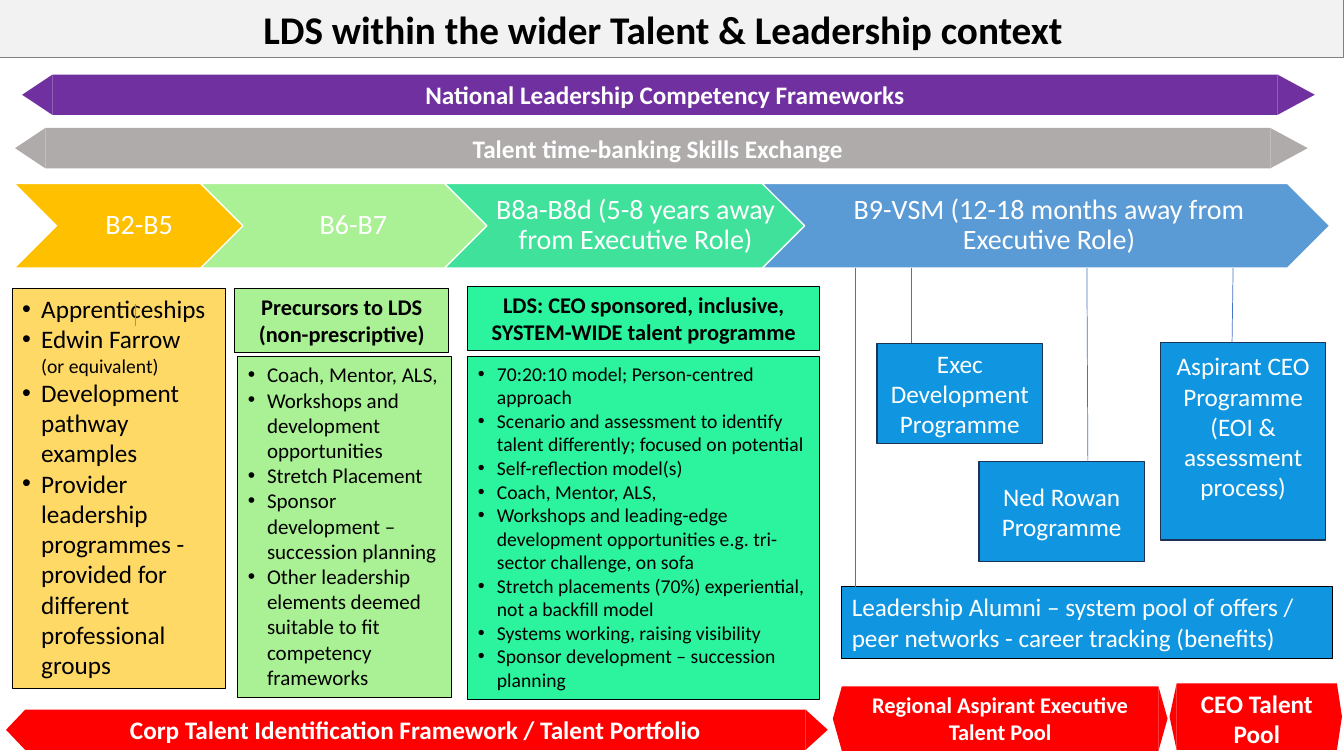
from dataclasses import dataclass
from typing import NamedTuple

from lxml import etree
from pptx import Presentation
from pptx.dml.color import RGBColor
from pptx.enum import shapes, text
from pptx.oxml import ns
from pptx.util import Inches, Pt


@dataclass(frozen=True)
class Theme:
    font: str = "Calibri"
    black: str = "000000"
    white: str = "FFFFFF"
    title_fill: str = "F2F2F2"
    title_line: str = "808080"
    purple: str = "7030A0"
    grey: str = "AFABAB"
    amber: str = "FFC000"
    sand: str = "FFD966"
    lime: str = "AAF094"
    mint: str = "3FE19B"
    green: str = "2CF49E"
    sky: str = "5B9BD5"
    blue: str = "1096E0"
    navy: str = "1E3256"
    red: str = "FF0000"
    link: str = "4472C4"
    mark: str = "ED7D31"
    title: int = 28
    stage: int = 20
    body: int = 18
    heading: int = 16
    list: int = 15
    small: int = 14


T = Theme()


class Rect(NamedTuple):
    x: float
    y: float
    w: float
    h: float


class Insets(NamedTuple):
    left: float = 0.1
    top: float = 0.05
    right: float = 0.1
    bottom: float = 0.05


@dataclass(frozen=True)
class Box:
    rect: Rect
    lines: tuple[str, ...]
    fill: str
    line: str | None = T.black
    line_width: float = 0.75
    size: int = T.body
    color: str = T.black
    bold: bool = False
    centred: bool = True
    middle: bool = False
    bullets: bool = False
    spacing: float = 1.0
    insets: Insets = Insets()
    kind: shapes.MSO_SHAPE = shapes.MSO_SHAPE.RECTANGLE


class Arrow(NamedTuple):
    rect: Rect
    tail: float
    head: float
    label: str
    fill: str
    size: int = T.body


class Stage(NamedTuple):
    x: float
    w: float
    label: str
    fill: str


class Link(NamedTuple):
    x1: float
    y1: float
    x2: float
    y2: float
    color: str = T.link


def programme(rect: Rect, *lines: str, bottom: float = 0.05) -> Box:
    return Box(rect, lines, T.blue, T.navy, 1, color=T.white, middle=True,
               insets=Insets(bottom=bottom))


def heading(rect: Rect, fill: str, *lines: str) -> Box:
    return Box(rect, lines, fill, size=T.heading, bold=True)


def bullet_list(rect: Rect, fill: str, size: int, *lines: str) -> Box:
    return Box(rect, lines, fill, size=size, centred=False, bullets=True)


TITLE = Box(Rect(0, 0, 13.33, 0.57), ("LDS within the wider Talent & Leadership context",),
            T.title_fill, T.title_line, size=T.title, bold=True, insets=Insets(right=0.28))

STAGES = (
    Stage(0.14, 2.42, "B2-B5", T.amber),
    Stage(1.99, 2.97, "B6-B7", T.lime),
    Stage(4.41, 3.73, "B8a-B8d (5-8 years away from Executive Role)", T.mint),
    Stage(7.56, 5.63, "B9-VSM (12-18 months away from Executive Role)", T.sky),
)
STAGE_TOP, STAGE_HEIGHT = 1.82, 0.84
STAGE_BOTTOM = STAGE_TOP + STAGE_HEIGHT

ARROWS = (
    Arrow(Rect(0.52, 0.74, 12.15, 0.4), 0.3, 0.37,
          "National Leadership Competency Frameworks", T.purple),
    Arrow(Rect(0.45, 1.27, 12.15, 0.4), 0.3, 0.37,
          "Talent time-banking Skills Exchange", T.grey),
    Arrow(Rect(0.25, 7.04, 7.74, 0.4), 0.19, 0.22,
          "Corp Talent Identification Framework / Talent Portfolio", T.red),
    Arrow(Rect(8.35, 6.81, 3.14, 0.64), 0.09, 0.09,
          "Regional Aspirant Executive Talent Pool", T.red, T.heading),
    Arrow(Rect(11.67, 6.78, 1.59, 0.66), 0.07, 0.05, "CEO Talent Pool", T.red),
)

BOXES = (
    bullet_list(Rect(0.12, 2.86, 2.12, 3.97), T.sand, T.body,
                "Apprenticeships", "Edwin Farrow \v(or equivalent)",
                "Development pathway examples",
                "Provider leadership programmes - provided for different professional groups"),
    heading(Rect(4.64, 2.84, 3.49, 0.64), T.green,
            "LDS: CEO sponsored, inclusive,", "SYSTEM-WIDE talent programme"),
    bullet_list(Rect(4.64, 3.54, 3.49, 3.4), T.green, T.small,
                "70:20:10 model; Person-centred approach",
                "Scenario and assessment to identify talent differently; focused on potential",
                "Self-reflection model(s)", "Coach, Mentor, ALS,",
                "Workshops and leading-edge development opportunities e.g. "
                "tri-sector challenge, on sofa",
                "Stretch placements (70%) experiential, not a backfill model",
                "Systems working, raising visibility",
                "Sponsor development – succession planning"),
    Box(Rect(8.35, 5.82, 4.87, 0.71),
        ("Leadership Alumni – system pool of offers / peer networks - "
         "career tracking (benefits)",), T.blue, color=T.white, centred=False),
    programme(Rect(8.7, 3.41, 1.64, 0.99), "Exec Development Programme"),
    programme(Rect(9.71, 4.58, 1.64, 0.99), "Ned Rowan Programme"),
    programme(Rect(11.51, 3.4, 1.64, 1.96), "Aspirant CEO Programme",
              "(EOI & assessment process)", bottom=0.35),
    heading(Rect(2.33, 2.86, 2.12, 0.64), T.lime, "Precursors to LDS", "(non-prescriptive)"),
    bullet_list(Rect(2.36, 3.54, 2.12, 3.38), T.lime, T.list,
                "Coach, Mentor, ALS,", "Workshops and development opportunities",
                "Stretch Placement", "Sponsor development – succession planning",
                "Other leadership elements deemed suitable to fit competency frameworks"),
)

LINKS = (
    Link(9.04, STAGE_BOTTOM, 9.04, 3.4),
    Link(10.78, STAGE_BOTTOM, 10.79, 4.58),
    Link(12.23, STAGE_BOTTOM, 12.22, 3.4),
    Link(8.48, STAGE_BOTTOM, 8.48, 5.82),
    Link(1.34, 3.02, 1.34, 3.23, T.mark),
)


def add_shape(slide, kind: shapes.MSO_SHAPE, rect: Rect, fill: str):
    sp = slide.shapes.add_shape(kind, *map(Inches, rect))
    sp.shadow.inherit = False
    sp.fill.solid()
    sp.fill.fore_color.rgb = RGBColor.from_string(fill)
    sp.line.fill.background()
    return sp


def add_bullet(p) -> None:
    p_pr = p._p.get_or_add_pPr()
    p_pr.set("marL", str(Inches(0.19)))
    p_pr.set("indent", str(Inches(-0.19)))
    etree.SubElement(p_pr, ns.qn("a:buFont")).set("typeface", "Arial")
    etree.SubElement(p_pr, ns.qn("a:buChar")).set("char", "•")


def draw_box(slide, box: Box) -> None:
    sp = add_shape(slide, box.kind, box.rect, box.fill)
    if box.line:
        sp.line.color.rgb = RGBColor.from_string(box.line)
        sp.line.width = Pt(box.line_width)
    tf = sp.text_frame
    tf.word_wrap = True
    tf.vertical_anchor = text.MSO_ANCHOR.MIDDLE if box.middle else text.MSO_ANCHOR.TOP
    tf.margin_left, tf.margin_top, tf.margin_right, tf.margin_bottom = map(Inches, box.insets)
    tf.text = "\n".join(box.lines)
    for p in tf.paragraphs:
        p.alignment = text.PP_ALIGN.CENTER if box.centred else text.PP_ALIGN.LEFT
        p.line_spacing = box.spacing
        if box.bullets:
            add_bullet(p)
        for i, r in enumerate(p.runs):
            r.font.name = T.font
            r.font.size = Pt(T.small if i else box.size)
            r.font.bold = box.bold
            r.font.color.rgb = RGBColor.from_string(box.color)


def draw_stage(slide, stage: Stage) -> None:
    draw_box(slide, Box(Rect(stage.x, STAGE_TOP, stage.w, STAGE_HEIGHT), (stage.label,),
                        stage.fill, T.white, 1, T.stage, T.white, middle=True, spacing=0.9,
                        insets=Insets(0.09, 0.03, 0.03, 0.03),
                        kind=shapes.MSO_SHAPE.CHEVRON))


def draw_arrow(slide, arrow: Arrow) -> None:
    x, y, w, h = arrow.rect
    draw_box(slide, Box(arrow.rect, (arrow.label,), arrow.fill, None, size=arrow.size,
                        color=T.white, bold=True))
    tips = ((x - arrow.tail / 2, arrow.tail, 270), (x + w + arrow.head / 2, arrow.head, 90))
    for centre, length, angle in tips:
        rect = Rect(centre - h / 2, y + (h - length) / 2, h, length)
        sp = add_shape(slide, shapes.MSO_SHAPE.ISOSCELES_TRIANGLE, rect, arrow.fill)
        sp.rotation = angle


def draw_link(slide, link: Link) -> None:
    cxn = slide.shapes.add_connector(shapes.MSO_CONNECTOR.STRAIGHT, *map(Inches, link[:4]))
    cxn.line.color.rgb = RGBColor.from_string(link.color)
    cxn.line.width = Pt(0.5)
    etree.SubElement(cxn._element.spPr, ns.qn("a:effectLst"))


def main() -> None:
    prs = Presentation()
    prs.slide_width, prs.slide_height = Inches(13.33), Inches(7.5)
    slide = prs.slides.add_slide(prs.slide_layouts[6])
    draw_box(slide, TITLE)
    for draw, items in ((draw_stage, STAGES), (draw_arrow, ARROWS),
                        (draw_box, BOXES), (draw_link, LINKS)):
        for item in items:
            draw(slide, item)
    prs.save("out.pptx")


if __name__ == "__main__":
    main()
